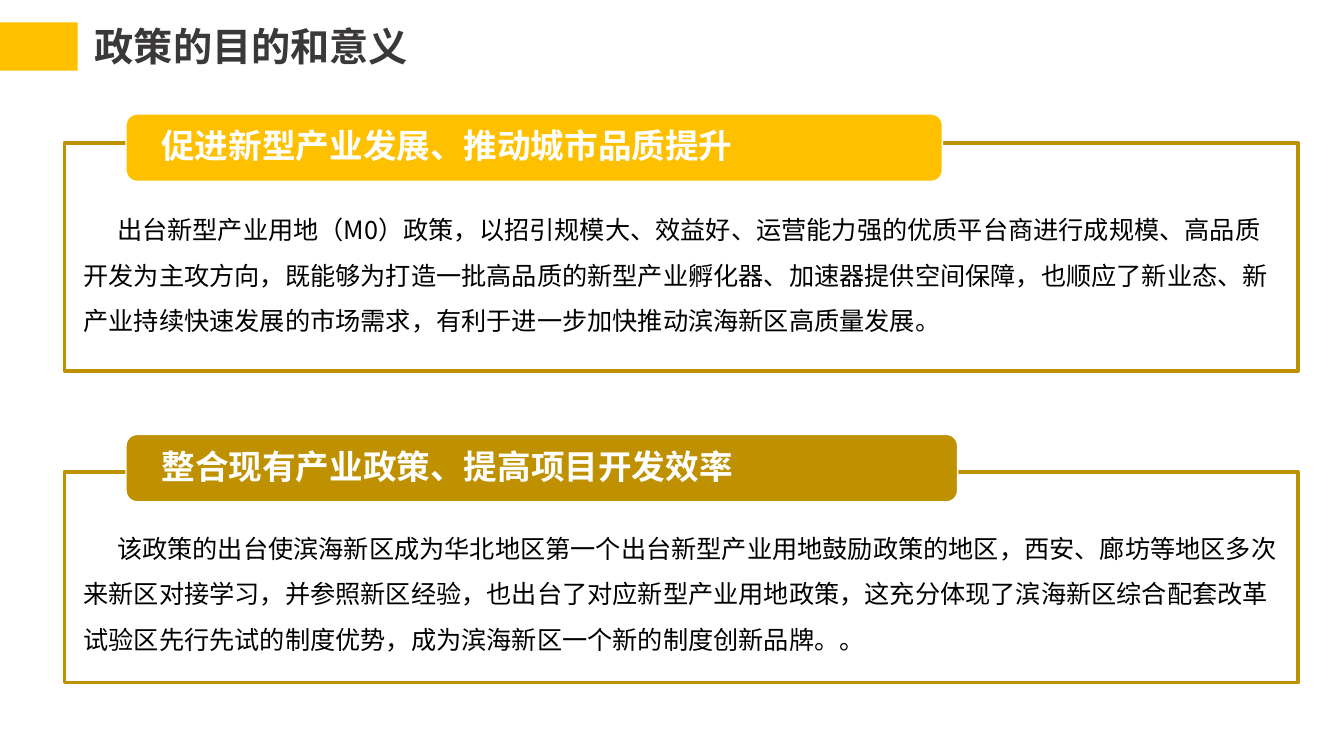
import pptx
import pptx.dml.color
import pptx.enum.shapes
import pptx.enum.text
import pptx.oxml.ns
import pptx.util
from lxml import etree

Pt = pptx.util.Pt
SHAPES = pptx.enum.shapes.MSO_SHAPE
ANCHOR = pptx.enum.text.MSO_ANCHOR
LEFT = pptx.enum.text.PP_ALIGN.LEFT
FONT = "Noto Sans CJK SC"
GOLD, DARK_GOLD, WHITE = "FFC000", "BF9000", "FFFFFF"

PANELS = [
    # frame (left, top, width, height), heading, heading fill, heading width, heading lift,
    # text drop, text width, text height, text
    ((46, 102.2, 881.3, 162.7), "促进新型产业发展、推动城市品质提升", GOLD, 583.2, 20.8,
     36.8, 861.8, 105,
     "出台新型产业用地（M0）政策，以招引规模大、效益好、运营能力强的优质平台商进行成规模、"
     "高品质开发为主攻方向，既能够为打造一批高品质的新型产业孵化器、加速器提供空间保障，"
     "也顺应了新业态、新产业持续快速发展的市场需求，有利于进一步加快推动滨海新区高质量发展。"),
    ((46, 337, 881.3, 150.5), "整合现有产业政策、提高项目开发效率", DARK_GOLD, 594, 26.7,
     29.5, 869, 138.2,
     "该政策的出台使滨海新区成为华北地区第一个出台新型产业用地鼓励政策的地区，"
     "西安、廊坊等地区多次来新区对接学习，并参照新区经验，也出台了对应新型产业用地政策，"
     "这充分体现了滨海新区综合配套改革试验区先行先试的制度优势，"
     "成为滨海新区一个新的制度创新品牌。。"),
]


def color(hex_value):
    return pptx.dml.color.RGBColor.from_string(hex_value)


def add_run(para, text, size, hex_value, bold=False):
    span = para.add_run()
    span.text = text
    span.font.size = Pt(size)
    span.font.bold = bold
    span.font.name = FONT
    span.font.color.rgb = color(hex_value)
    # East Asian characters take their own typeface
    east_asian = etree.SubElement(span.font._element, pptx.oxml.ns.qn("a:ea"))
    east_asian.set("typeface", FONT)


def add_block(page, kind, box, fill=None, line=None, line_width=1):
    block = page.shapes.add_shape(kind, *map(Pt, box))
    block.shadow.inherit = False
    if fill:
        block.fill.solid()
        block.fill.fore_color.rgb = color(fill)
    else:
        block.fill.background()
    if line:
        block.line.color.rgb = color(line)
        block.line.width = Pt(line_width)
    else:
        block.line.fill.background()
    return block


def add_title(page, box, text):
    left, top, width, height = box
    # Gold marker at the slide edge
    add_block(page, SHAPES.RECTANGLE, (0, top + 3.8, 55.5, 34.5), GOLD)
    # Title
    title = page.shapes.title
    title.left, title.top, title.width, title.height = map(Pt, box)
    frame = title.text_frame
    frame.auto_size = pptx.enum.text.MSO_AUTO_SIZE.NONE
    frame.vertical_anchor = ANCHOR.TOP
    frame.margin_left = frame.margin_right = Pt(7.9)
    para = frame.paragraphs[0]
    para.alignment = LEFT
    add_run(para, text, 28, "3B3838", bold=True)


def add_panel(page, box, heading, fill, heading_width, lift,
              drop, text_width, text_height, text):
    left, top, width, height = box
    # Outline
    add_block(page, SHAPES.RECTANGLE, box, line=DARK_GOLD, line_width=2.5)
    # Heading tab over the top edge
    tab = add_block(page, SHAPES.ROUNDED_RECTANGLE,
                    (left + 44, top - lift, heading_width, 48.2), fill, WHITE)
    frame = tab.text_frame
    frame.vertical_anchor = ANCHOR.MIDDLE
    frame.margin_left = frame.margin_right = Pt(23)
    frame.margin_top = frame.margin_bottom = 0
    para = frame.paragraphs[0]
    para.alignment = LEFT
    para.line_spacing = 0.9
    add_run(para, heading, 24, WHITE, bold=True)
    # Body text
    body = page.shapes.add_textbox(Pt(left + 6.6), Pt(top + drop),
                                   Pt(text_width), Pt(text_height))
    body.text_frame.word_wrap = True
    para = body.text_frame.paragraphs[0]
    para.line_spacing = 1.5
    para._p.get_or_add_pPr().set("indent", str(Pt(24)))
    add_run(para, text, 18, "000000")


def main():
    deck = pptx.Presentation()
    deck.slide_width, deck.slide_height = Pt(960), Pt(540)
    page = deck.slides.add_slide(deck.slide_layouts[5])
    add_title(page, (59.8, 12.2, 459.4, 41.8), "政策的目的和意义")
    for panel in PANELS:
        add_panel(page, *panel)
    deck.save("out.pptx")


if __name__ == "__main__":
    main()
